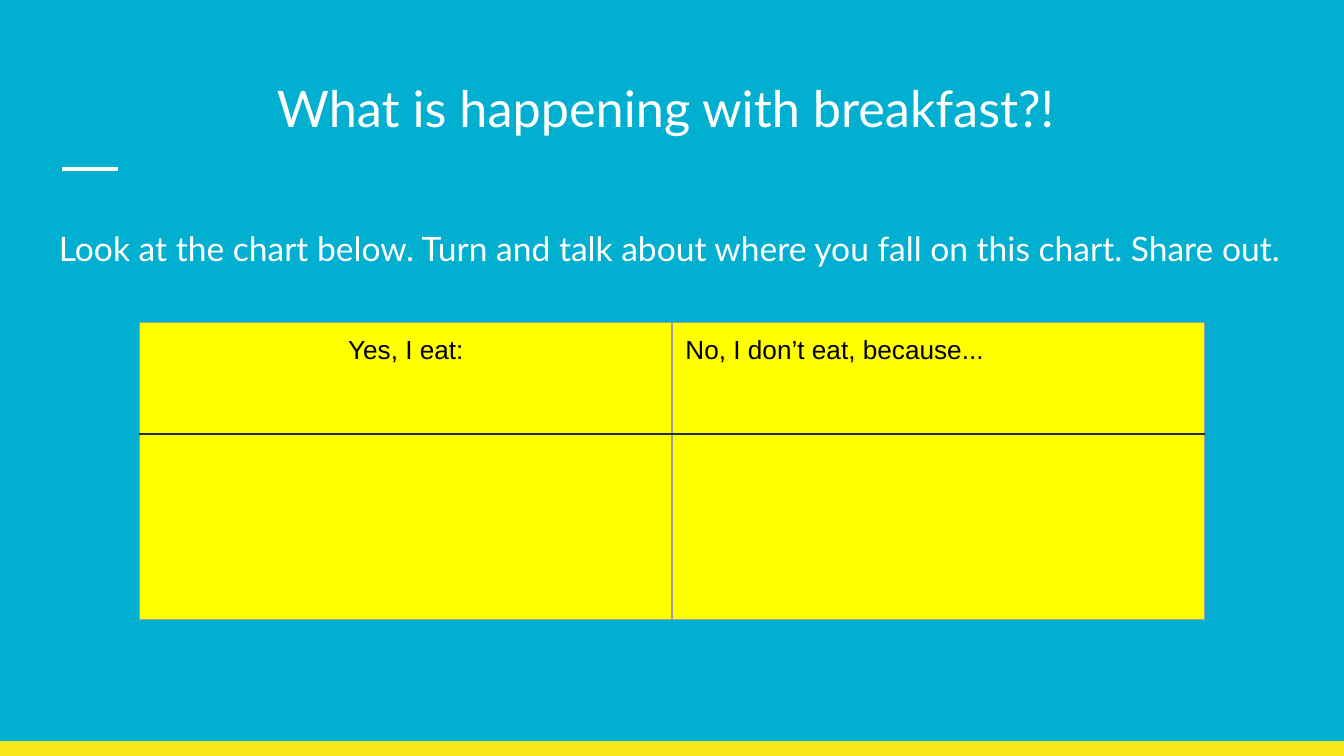
from lxml import etree
from pptx import Presentation
from pptx.dml.color import RGBColor
from pptx.enum.shapes import MSO_CONNECTOR as Conn, MSO_SHAPE as Shape
from pptx.enum.text import MSO_ANCHOR as Anchor, PP_ALIGN as Align
from pptx.oxml.ns import qn
from pptx.util import Inches, Pt

COLORS = {
    "back": "01AFD1",
    "band": "F8E71C",
    "white": "FFFFFF",
    "cell": "FFFF00",
    "ink": "000000",
    "edge": "9E9E9E",
    "rule": "1E2D31",
}
WIDTH = 10
HEIGHT = WIDTH * 9 / 16
INSET = Inches(0.1)


def color(name):
    return RGBColor.from_string(COLORS[name])


def add_run(para, text, size, font, hue):
    run = para.add_run()
    run.text = text
    run.font.size = Pt(size)
    run.font.name = font
    run.font.color.rgb = color(hue)


def set_inset(item):
    """Give a text frame or a table cell equal margins."""
    item.margin_left = item.margin_right = INSET
    item.margin_top = item.margin_bottom = INSET


def add_text(slide, box, text, size, align):
    frame = slide.shapes.add_textbox(*map(Inches, box)).text_frame
    frame.word_wrap = True
    frame.vertical_anchor = Anchor.TOP
    set_inset(frame)
    para = frame.paragraphs[0]
    para.alignment = align
    para.line_spacing = 1.15
    para.space_after = Pt(12)
    add_run(para, text, size, "Lato", "white")


def add_band(slide):
    tall = 0.11
    band = slide.shapes.add_shape(
        Shape.RECTANGLE, 0, Inches(HEIGHT - tall), Inches(WIDTH), Inches(tall))
    band.shadow.inherit = False
    band.fill.solid()
    band.fill.fore_color.rgb = color("band")
    band.line.fill.background()


def add_dash(slide):
    dash = slide.shapes.add_connector(
        Conn.STRAIGHT, Inches(0.46), Inches(1.26), Inches(0.88), Inches(1.26))
    dash.line.color.rgb = color("white")
    dash.line.width = Pt(2.25)
    etree.SubElement(dash._element.spPr, qn("a:effectLst"))


def set_edges(cell, hues):
    """Draw the cell's sides; hues maps L, R, T, B in that order."""
    props = cell._tc.get_or_add_tcPr()
    for i, (side, hue) in enumerate(hues.items()):
        line = etree.Element(qn(f"a:ln{side}"), w=str(Pt(0.75)))
        fill = etree.SubElement(line, qn("a:solidFill"))
        etree.SubElement(fill, qn("a:srgbClr"), val=COLORS[hue])
        props.insert(i, line)


def add_grid(slide, heads, heights):
    table = slide.shapes.add_table(
        len(heights), len(heads), Inches(1.04), Inches(2.4),
        Inches(7.92), Inches(sum(heights))).table
    for row, height in zip(table.rows, heights):
        row.height = Inches(height)
    for cell in table.iter_cells():
        set_inset(cell)
        cell.fill.solid()
        cell.fill.fore_color.rgb = color("cell")
    for r, (top, base) in enumerate([("edge", "rule"), ("rule", "edge")]):
        for cell in table.rows[r].cells:
            set_edges(cell, {"L": "edge", "R": "edge", "T": top, "B": base})
    for cell, (text, align) in zip(table.rows[0].cells, heads):
        para = cell.text_frame.paragraphs[0]
        para.alignment = align
        add_run(para, text, 14, "Arial", "ink")


def main():
    deck = Presentation()
    deck.slide_width, deck.slide_height = Inches(WIDTH), Inches(HEIGHT)
    slide = deck.slides.add_slide(deck.slide_layouts[6])
    slide.background.fill.solid()
    slide.background.fill.fore_color.rgb = color("back")
    add_band(slide)
    add_dash(slide)
    add_text(slide, (0.34, 0.41, 9.32, 0.71),
             "What is happening with breakfast?! ", 27, Align.CENTER)
    add_text(slide, (0.34, 1.55, 9.32, 3.45),
             "Look at the chart below. Turn and talk about where you fall "
             "on this chart. Share out.", 18, Align.LEFT)
    add_grid(slide, [("Yes, I eat:", Align.CENTER),
                     ("No, I don’t eat, because...", Align.LEFT)],
             [0.83, 1.38])
    deck.save("out.pptx")


if __name__ == "__main__":
    main()
